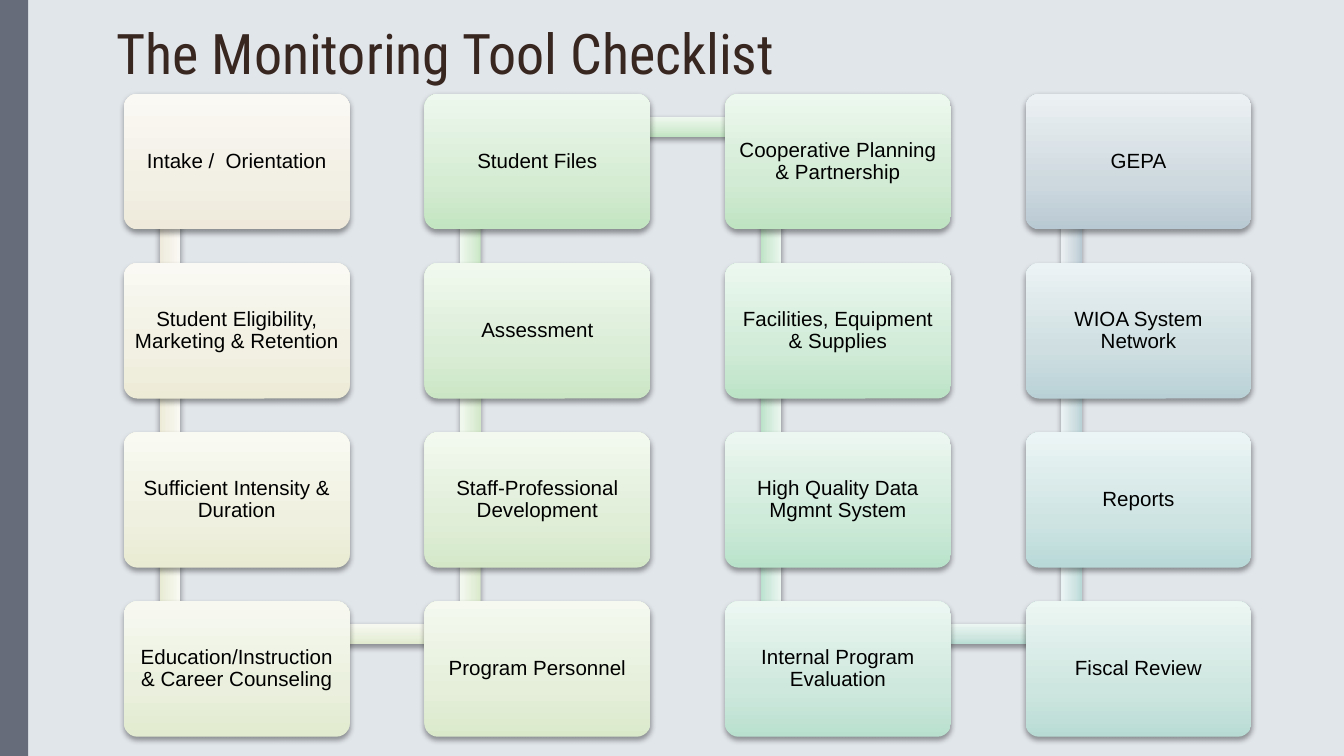
"""Build the monitoring tool checklist slide: sixteen steps on a snaking path."""
import math

import lxml.etree
import pptx
import pptx.dml.color
import pptx.enum.shapes
import pptx.enum.text
import pptx.oxml
import pptx.oxml.ns
import pptx.util

Pt = pptx.util.Pt
SHAPE = pptx.enum.shapes.MSO_SHAPE
ALIGN = pptx.enum.text.PP_ALIGN
MIDDLE = pptx.enum.text.MSO_ANCHOR.MIDDLE

TITLE = "The Monitoring Tool Checklist"
COLORS = {"background": "E1E6EB", "side bar": "666C79", "title": "382620", "label": "000000"}
STEP_COLORS = {
    "Intake /  Orientation": ("EEE9DA", "F2EFE4", "FAF9F4"),
    "Student Eligibility, Marketing & Retention": ("EDEBD6", "F1F0E2", "FAF9F3"),
    "Sufficient Intensity & Duration": ("E9EBD2", "EFF0DF", "F9FAF2"),
    "Education/Instruction & Career Counseling": ("E2EACF", "EAF0DD", "F7F9F1"),
    "Program Personnel": ("DBE9CB", "E5EFDA", "F5F9F0"),
    "Staff-Professional Development": ("D4E8C8", "E0EED8", "F3F9EF"),
    "Assessment": ("CBE6C5", "DAEDD6", "F1F9EF"),
    "Student Files": ("C3E5C1", "D5ECD3", "EEF8EE"),
    "Cooperative Planning & Partnership": ("BFE4C2", "D2EBD4", "EDF8EE"),
    "Facilities, Equipment & Supplies": ("BCE3C6", "D0EBD7", "ECF8EF"),
    "High Quality Data Mgmnt System": ("B9E2CA", "CEEAD9", "ECF7F1"),
    "Internal Program Evaluation": ("B9E0CF", "CEE8DD", "ECF7F2"),
    "Fiscal Review": ("B8DCD4", "CEE6E0", "ECF6F3"),
    "Reports": ("B8D9D8", "CEE4E3", "ECF5F5"),
    "WIOA System Network": ("B9D1D6", "CEDEE1", "ECF3F4"),
    "GEPA": ("B9C9D3", "CED9DF", "ECF1F3"),
}

WIDTH, HEIGHT = 720, 405
ROWS = 4
GRID_LEFT, GRID_TOP = 66.4, 50.3
COL_STEP, ROW_STEP = 161, 90.6
BOX_W, BOX_H = 121, 72.6
PIPE_X, PIPE_Y, PIPE_THICK = 24.7, 17.7, 11


def rgb(value):
    return pptx.dml.color.RGBColor.from_string(value)


def blend(start, end, share):
    """Mix two hex colours."""
    pairs = [(int(start[k:k + 2], 16), int(end[k:k + 2], 16)) for k in (0, 2, 4)]
    return "".join(f"{round(a + (b - a) * share):02X}" for a, b in pairs)


def add_block(slide, kind, left, top, width, height, colors):
    """Add a shape with an upward three-stop gradient and a soft shadow."""
    sp = slide.shapes.add_shape(kind, Pt(left), Pt(top), Pt(width), Pt(height))
    sp.line.fill.background()
    stops = "".join(f'<a:gs pos="{pos}"><a:srgbClr val="{color}"/></a:gs>'
                    for pos, color in zip((0, 35000, 100000), colors))
    ns = pptx.oxml.ns.nsdecls("a")
    fill = pptx.oxml.parse_xml(
        f'<a:gradFill {ns} rotWithShape="1"><a:gsLst>{stops}</a:gsLst>'
        '<a:lin ang="16200000" scaled="0"/></a:gradFill>')
    shadow = pptx.oxml.parse_xml(
        f'<a:effectLst {ns}><a:outerShdw blurRad="40000" dist="20000" dir="5400000" '
        'rotWithShape="0"><a:srgbClr val="000000"><a:alpha val="38000"/></a:srgbClr>'
        '</a:outerShdw></a:effectLst>')
    line = sp.line._get_or_add_ln()
    line.addprevious(fill)
    line.addnext(shadow)
    return sp


def write(sp, text, size, font, color, inset):
    tf = sp.text_frame
    tf.word_wrap = True
    tf.vertical_anchor = MIDDLE
    tf.margin_left = tf.margin_right = tf.margin_top = tf.margin_bottom = Pt(inset)
    tf.text = text
    p = tf.paragraphs[0]
    p.font.size, p.font.name = Pt(size), font
    p.font.color.rgb = rgb(color)
    return p


def box_position(index):
    """Go down even columns and up odd ones."""
    col, row = divmod(index, ROWS)
    if col % 2:
        row = ROWS - 1 - row
    return GRID_LEFT + col * COL_STEP, GRID_TOP + row * ROW_STEP


def main():
    prs = pptx.Presentation()
    prs.slide_width, prs.slide_height = Pt(WIDTH), Pt(HEIGHT)
    slide = prs.slides.add_slide(prs.slide_layouts[6])
    slide.background.fill.solid()
    slide.background.fill.fore_color.rgb = rgb(COLORS["background"])

    bar = slide.shapes.add_shape(SHAPE.RECTANGLE, 0, 0, Pt(15.1), Pt(HEIGHT))
    bar.shadow.inherit = False
    bar.fill.solid()
    bar.fill.fore_color.rgb = rgb(COLORS["side bar"])
    bar.line.fill.background()

    title = slide.shapes.add_textbox(Pt(55.4), Pt(6.5), Pt(594.7), Pt(43.2))
    write(title, TITLE, 30, "Roboto Condensed", COLORS["title"], 7.2)

    steps = list(STEP_COLORS.items())
    last_pipe = len(steps) - 2
    for i, (label, colors) in enumerate(steps):
        x, y = box_position(i)
        if i <= last_pipe:
            next_x, next_y = box_position(i + 1)
            dx, dy = next_x - x, next_y - y
            length = math.hypot(dx, dy)
            mixed = [blend(a, b, i / last_pipe) for a, b in zip(colors, steps[i + 1][1])]
            pipe = add_block(slide, SHAPE.RECTANGLE, x + PIPE_X + (dx - length) / 2,
                             y + PIPE_Y + (dy - PIPE_THICK) / 2, length, PIPE_THICK, mixed)
            pipe.rotation = math.degrees(math.atan2(dy, dx)) % 360
        box = add_block(slide, SHAPE.ROUNDED_RECTANGLE, x, y, BOX_W, BOX_H, colors)
        box.adjustments[0] = 0.1
        p = write(box, label, 11, "Arial", COLORS["label"], 3.6)
        p.alignment = ALIGN.CENTER
        p.line_spacing = 0.9

    prs.save("out.pptx")


if __name__ == "__main__":
    main()
